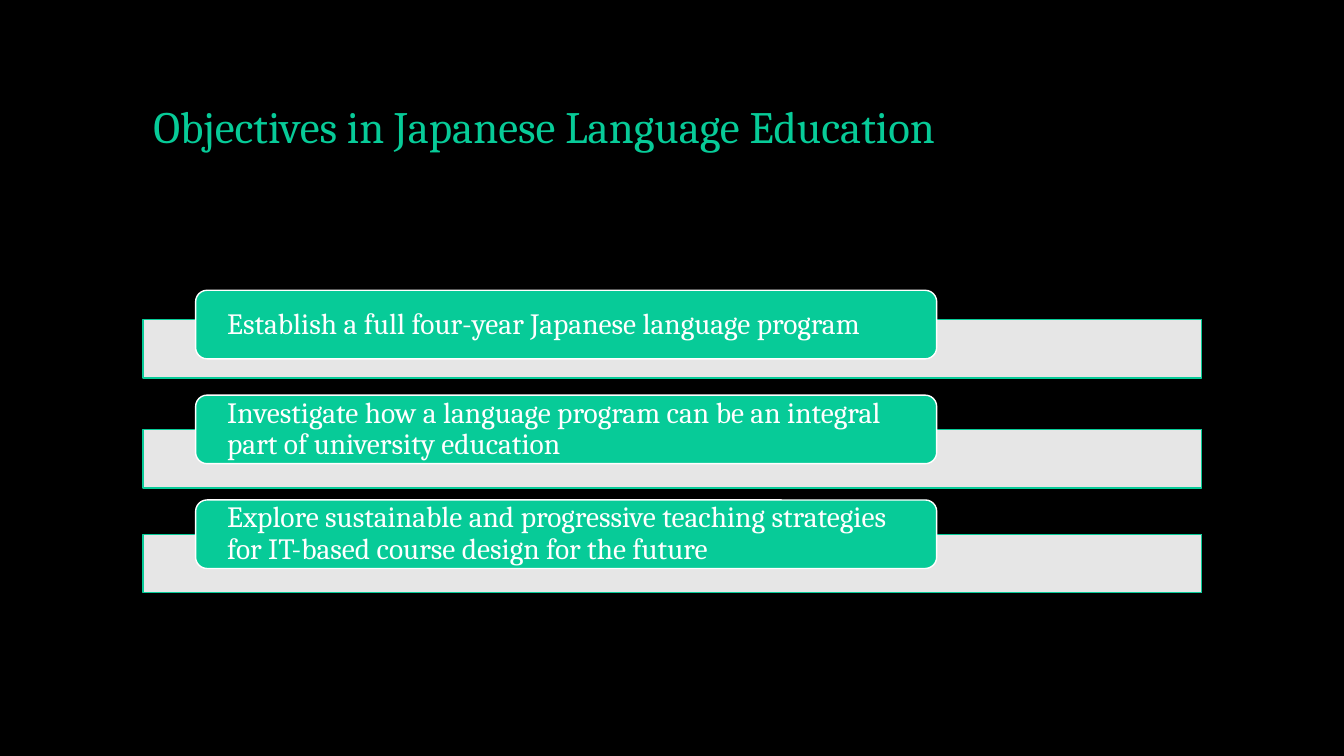
import pptx
import pptx.dml.color
import pptx.enum.shapes
import pptx.enum.text
import pptx.oxml
import pptx.oxml.ns
import pptx.util
from pptx.util import Inches

GREEN, WHITE, BLACK = "07CB98", "FFFFFF", "000000"
LEFT, WIDTH = 1.42, 10.5
PILL_TOP, PILL_STEP = 2.88, 1.04
OBJECTIVES = [
    # wording, top of the bar behind it
    ("Establish a full four-year Japanese language program", 3.17),
    ("Investigate how a language program can be an integral part of university education", 4.26),
    ("Explore sustainable and progressive teaching strategies for IT-based course design for the future", 5.3),
]


def paint(color_holder, color):
    color_holder.solid()
    color_holder.fore_color.rgb = pptx.dml.color.RGBColor.from_string(color)


def set_all(target, values):
    for name, value in values.items():
        setattr(target, name, value)


def write(shape, wording, size, color, frame_format):
    """Put one left-aligned paragraph into the shape."""
    frame = shape.text_frame
    frame.text = wording
    set_all(frame, {"word_wrap": True,
                    "auto_size": pptx.enum.text.MSO_AUTO_SIZE.NONE, **frame_format})
    paragraph = frame.paragraphs[0]
    set_all(paragraph, {"alignment": pptx.enum.text.PP_ALIGN.LEFT, "line_spacing": 0.9})
    font = paragraph.runs[0].font
    set_all(font, {"name": "Cambria", "size": pptx.util.Pt(size)})
    paint(font.fill, color)


def add_block(shapes, preset, box, fill, line):
    block = shapes.add_shape(preset, *map(Inches, box))
    block.shadow.inherit = False
    paint(block.fill, fill)
    paint(block.line.fill, line)
    block.line.width = pptx.util.Pt(1)
    return block


def add_bar(shapes, top):
    bar = add_block(shapes, pptx.enum.shapes.MSO_SHAPE.RECTANGLE,
                    (LEFT, top, WIDTH, 0.58), WHITE, GREEN)
    fill_color = bar.fill._xPr.find(pptx.oxml.ns.qn("a:solidFill"))[0]
    alpha = pptx.oxml.parse_xml(f'<a:alpha {pptx.oxml.ns.nsdecls("a")} val="90000"/>')
    fill_color.append(alpha)


def add_pill(shapes, top, wording):
    pill = add_block(shapes, pptx.enum.shapes.MSO_SHAPE.ROUNDED_RECTANGLE,
                     (1.94, top, 7.35, 0.68), GREEN, WHITE)
    write(pill, wording, 21, WHITE, {
        "vertical_anchor": pptx.enum.text.MSO_ANCHOR.MIDDLE,
        "margin_left": Inches(0.28), "margin_right": Inches(0.28),
        "margin_top": 0, "margin_bottom": 0,
    })


def add_title(slide, wording):
    title = slide.shapes.title
    set_all(title, {"left": Inches(LEFT), "top": Inches(0.4),
                    "width": Inches(WIDTH), "height": Inches(1.17)})
    write(title, wording, 32, GREEN,
          {"vertical_anchor": pptx.enum.text.MSO_ANCHOR.BOTTOM})


def main():
    deck = pptx.Presentation()
    set_all(deck, {"slide_width": Inches(13.33), "slide_height": Inches(7.5)})
    slide = deck.slides.add_slide(deck.slide_layouts.get_by_name("Title Only"))
    paint(slide.background.fill, BLACK)
    add_title(slide, "Objectives in Japanese Language Education")
    objective_list = slide.shapes.add_group_shape().shapes
    for row, (wording, bar_top) in enumerate(OBJECTIVES):
        add_bar(objective_list, bar_top)
        add_pill(objective_list, PILL_TOP + row * PILL_STEP, wording)
    deck.save("out.pptx")


if __name__ == "__main__":
    main()
